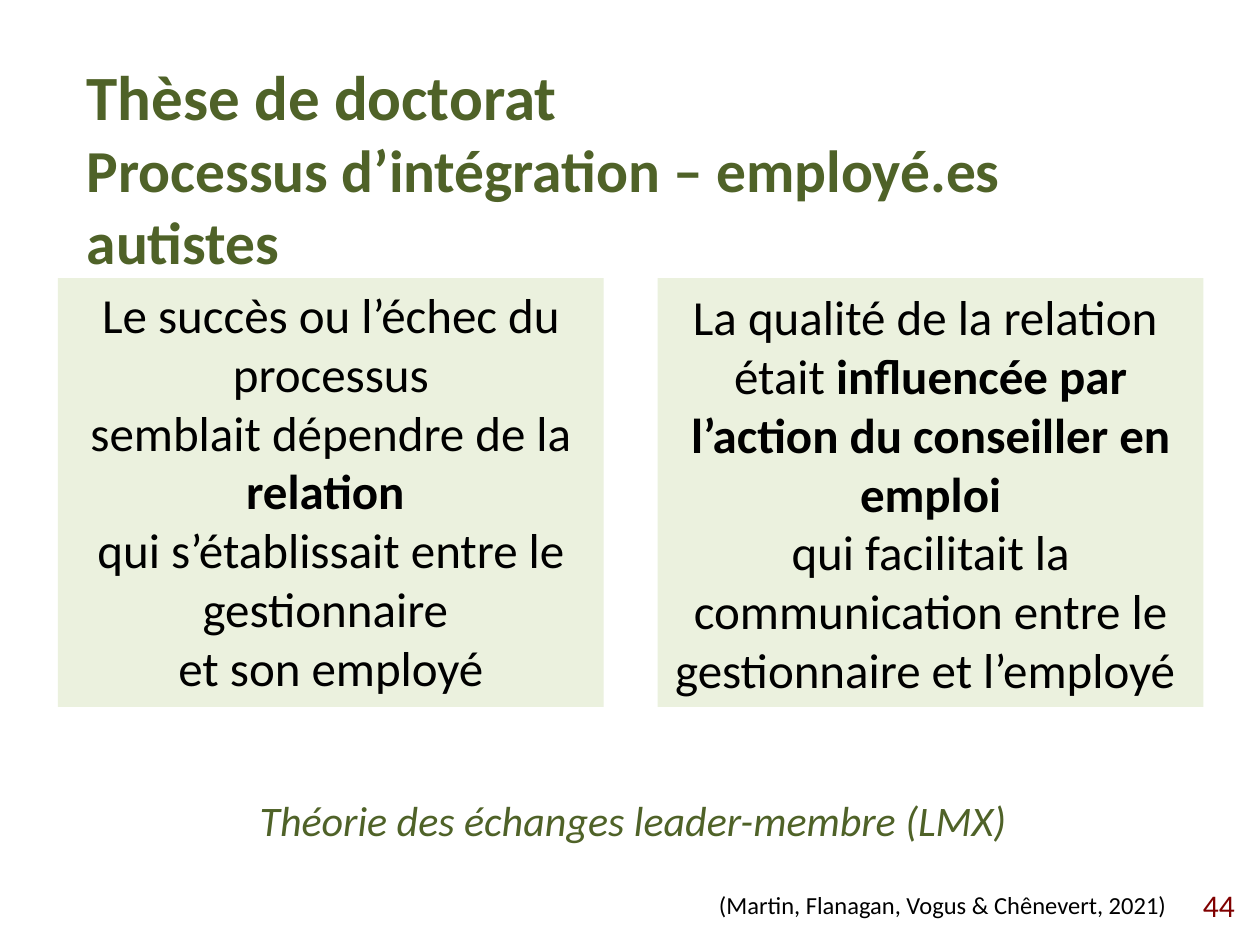
from pptx import Presentation
from pptx.dml.color import RGBColor
from pptx.enum.shapes import MSO_SHAPE
from pptx.enum.text import MSO_ANCHOR, PP_ALIGN
from pptx.util import Cm, Pt

GREEN = "4F6228"
PALE_GREEN = "EBF1DE"
BLACK = "000000"
DARK_RED = "800000"

TITLE = [[
    ("Thèse de doctorat \n", {"size": 36}),
    ("Processus d’intégration – employé.es autistes", {"size": 34}),
]]
FINDINGS = [
    (MSO_ANCHOR.TOP, [
        [
            ("Le succès ou l’échec du processus\nsemblait dépendre de la ", {}),
            ("relation ", {"bold": True}),
        ],
        [("qui s’établissait entre le gestionnaire \net son employé", {})],
    ]),
    (MSO_ANCHOR.MIDDLE, [[
        ("La qualité de la relation \nétait ", {}),
        ("influencée par l’action du conseiller en emploi\n", {"bold": True}),
        ("qui facilitait la communication entre le gestionnaire et l’employé ", {}),
    ]]),
]
THEORY = [[("Théorie des échanges leader-membre (LMX)", {})]]
CITATION = [[("(Martin, Flanagan, Vogus & Chênevert, 2021)", {})]]
PAGE_NUMBER = [[("44", {})]]

PANEL_LEFT, PANEL_TOP = 1.17, 5.61
PANEL_WIDTH, PANEL_HEIGHT = 11, 8.64
PANEL_STEP = 12.09


def color(value):
    return RGBColor.from_string(value)


def write(box, paragraphs, size=18, ink=BLACK, bold=False, italic=False,
          align=PP_ALIGN.LEFT, anchor=MSO_ANCHOR.TOP):
    frame = box.text_frame
    frame.word_wrap = True
    frame.vertical_anchor = anchor
    for index, spans in enumerate(paragraphs):
        para = frame.add_paragraph() if index else frame.paragraphs[0]
        para.alignment = align
        for text, style in spans:
            for number, line in enumerate(text.split("\n")):
                if number:
                    para.add_line_break()
                if not line:
                    continue
                span = para.add_run()
                span.text = line
                span.font.name = "Calibri"
                span.font.size = Pt(style.get("size", size))
                span.font.bold = style.get("bold", bold)
                span.font.italic = italic
                span.font.color.rgb = color(ink)


def add_text(page, place, paragraphs, **style):
    box = page.shapes.add_textbox(*map(Cm, place))
    write(box, paragraphs, **style)


def add_panel(page, place, paragraphs, **style):
    panel = page.shapes.add_shape(MSO_SHAPE.RECTANGLE, *map(Cm, place))
    panel.shadow.inherit = False
    panel.fill.solid()
    panel.fill.fore_color.rgb = color(PALE_GREEN)
    panel.line.fill.background()
    write(panel, paragraphs, **style)


def main():
    deck = Presentation()
    deck.slide_width, deck.slide_height = Cm(25.4), Cm(19.05)
    page = deck.slides.add_slide(deck.slide_layouts[6])

    add_text(page, (24, 17.73, 1.98, 1.02), PAGE_NUMBER, ink=DARK_RED)
    for index, (anchor, paragraphs) in enumerate(FINDINGS):
        left = PANEL_LEFT + index * PANEL_STEP
        add_panel(page, (left, PANEL_TOP, PANEL_WIDTH, PANEL_HEIGHT), paragraphs,
                  size=28, align=PP_ALIGN.CENTER, anchor=anchor)
    add_text(page, (4.85, 15.9, 15.82, 1.27), THEORY,
             size=24, ink=GREEN, italic=True, align=PP_ALIGN.CENTER)
    add_text(page, (1.5, 1.04, 22.76, 3.25), TITLE, ink=GREEN, bold=True)
    add_text(page, (10.77, 17.81, 13, 0.86), CITATION,
             size=14, align=PP_ALIGN.RIGHT)

    deck.save("out.pptx")


if __name__ == "__main__":
    main()
